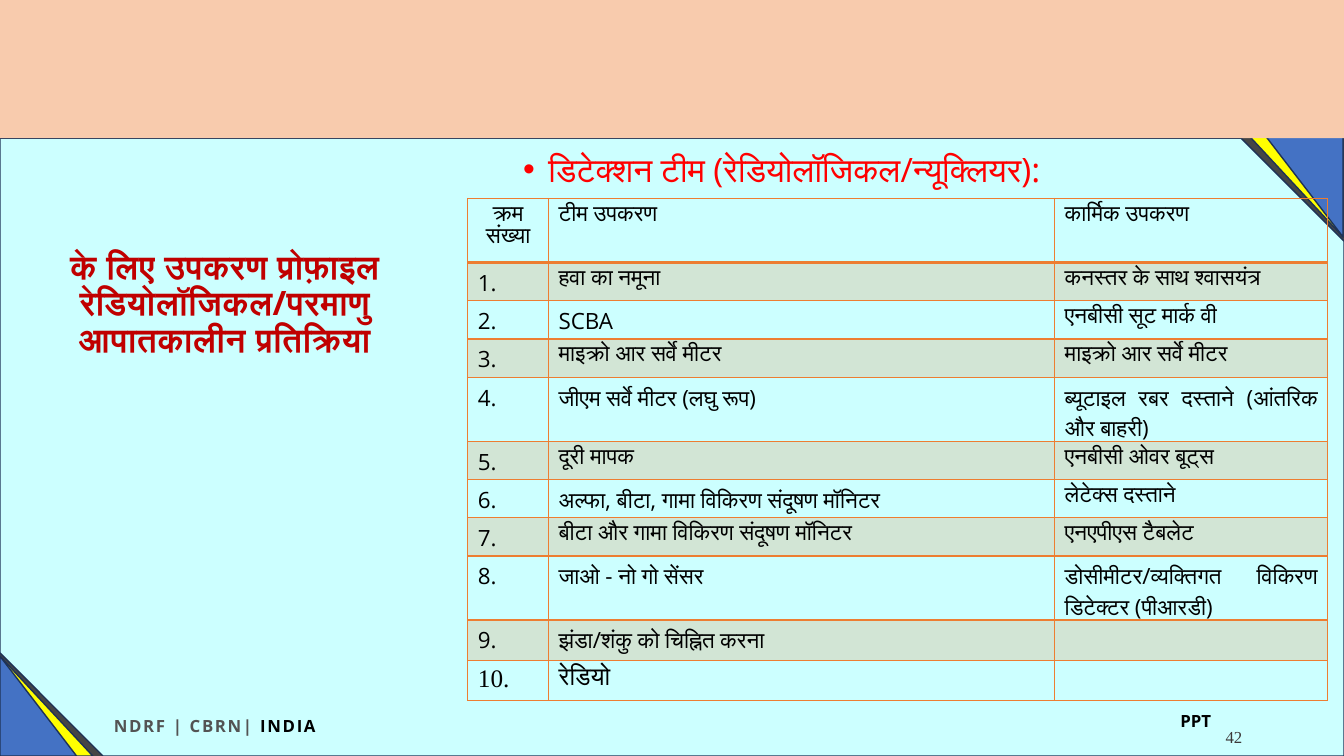
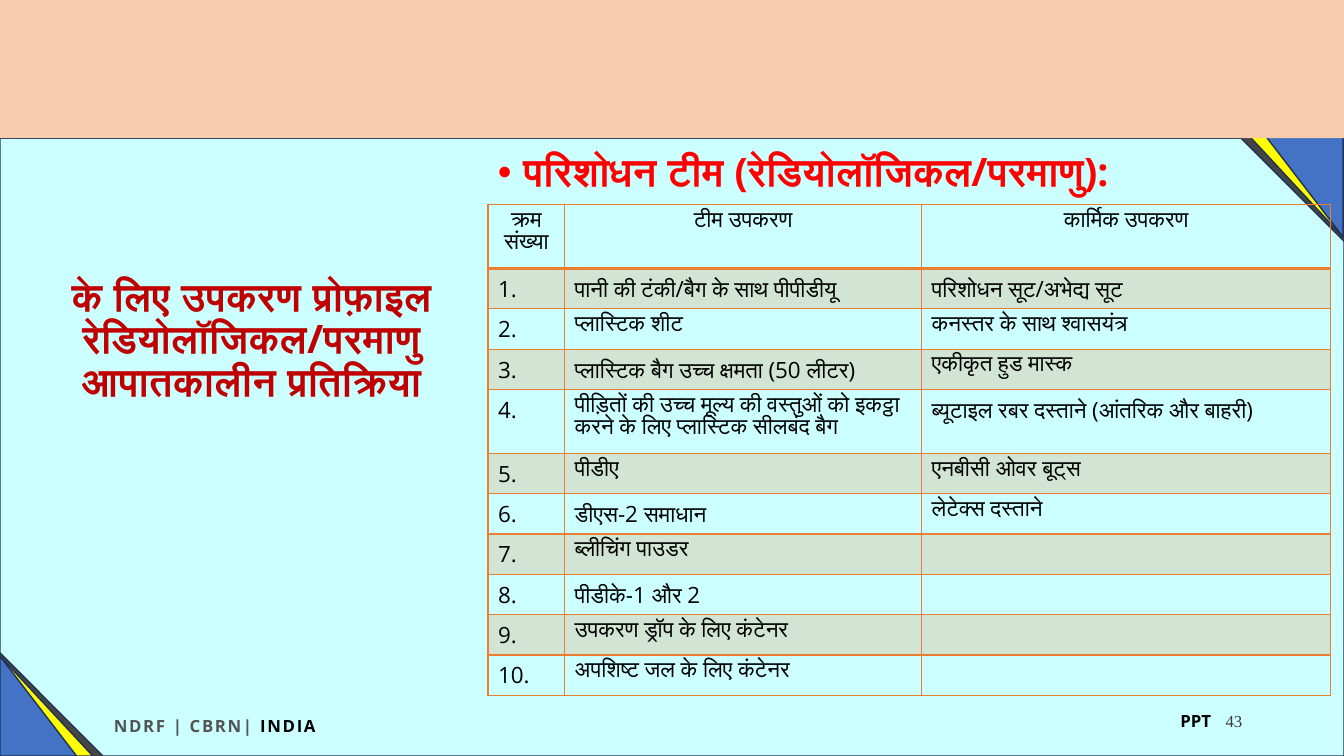
import pptx
import pptx.util
import pptx.dml.color
import pptx.enum.shapes
import pptx.enum.text
import pptx.oxml
import pptx.oxml.ns
from pptx.util import Inches

SHAPE = pptx.enum.shapes.MSO_SHAPE
ALIGN = pptx.enum.text.PP_ALIGN
ANCHOR = pptx.enum.text.MSO_ANCHOR
FIT = pptx.enum.text.MSO_AUTO_SIZE
NS = pptx.oxml.ns.nsdecls("a")
SANS, SERIF = "Open Sans", "Times New Roman"
BLACK, ORANGE, NAVY = "000000", "ED7D31", "1E3256"
HEADS = ["क्रम संख्या", "टीम उपकरण", "कार्मिक उपकरण"]
TITLE = ["के लिए उपकरण प्रोफ़ाइल",
         "रेडियोलॉजिकल/परमाणु आपातकालीन प्रतिक्रिया"]


def color(code):
    return pptx.dml.color.RGBColor.from_string(code)


def node(xml):
    """Parse one drawing element, adding its namespace to the first tag."""
    end = min(i for i in (xml.find("/>"), xml.find(">")) if i > 0)
    return pptx.oxml.parse_xml(f"{xml[:end]} {NS}{xml[end:]}")


class Deck:
    def __init__(self):
        self.prs = pptx.Presentation()
        self.prs.slide_width = Inches(13.33)
        self.prs.slide_height = Inches(7.5)
        self.slide = None

    def start(self, number, top):
        """Add a slide with the shared frame, footer and slide number."""
        self.slide = self.prs.slides.add_slide(self.prs.slide_layouts[5])
        fill = self.slide.background.fill
        fill.solid()
        fill.fore_color.rgb = color("454545")
        for width, code in ((0.92, "FFFF00"), (0.76, "4472C4")):
            self.shape(SHAPE.RIGHT_TRIANGLE, (0, 6.51, width, 0.99), code, NAVY)
            corner = (13.32 - width, 1.36, width, 0.99)
            self.shape(SHAPE.RIGHT_TRIANGLE, corner, code, NAVY).rotation = 180
        self.shape(SHAPE.SNIP_2_DIAG_RECTANGLE, (0, 1.37, 13.33, 6.13),
                   "CCFFFF", NAVY)
        self.shape(SHAPE.RECTANGLE, (0, 0, 13.33, 1.37), "F8CBAD")

        frame, par = self.text((0, 7.01, 4.26, 0.37), ALIGN.CENTER)
        frame.margin_left = frame.margin_right = Inches(0.09)
        frame.margin_top = frame.margin_bottom = Inches(0.09)
        self.run(par, "NDRF | CBRN| ", 12, "535353", bold=True, gap=1.2)
        self.run(par, "INDIA", 12, BLACK, bold=True, gap=1.2)
        par = self.text((11.61, 7, 0.94, 0.3))[1]
        self.run(par, "PPT", 12, BLACK, bold=True)
        frame, par = self.text((9.42, top, 3, 0.4), ALIGN.RIGHT)
        frame.vertical_anchor = ANCHOR.MIDDLE
        self.run(par, str(number), 12, "3B3838", SERIF)

    def shape(self, kind, box, code, edge=None):
        item = self.slide.shapes.add_shape(kind, *map(Inches, box))
        item.shadow.inherit = False
        item.fill.solid()
        item.fill.fore_color.rgb = color(code)
        if edge:
            item.line.color.rgb = color(edge)
            item.line.width = pptx.util.Pt(1)
        else:
            item.line.fill.background()
        return item

    def text(self, box, align=ALIGN.LEFT):
        """Add a text box; return its frame and first paragraph."""
        frame = self.slide.shapes.add_textbox(*map(Inches, box)).text_frame
        frame.word_wrap = True
        par = frame.paragraphs[0]
        par.alignment = align
        return frame, par

    def run(self, par, words, size, code, face=SANS, bold=False, gap=0):
        run = par.add_run()
        run.text = words
        font = run.font
        font.size, font.name, font.bold = pptx.util.Pt(size), face, bold
        font.color.rgb = color(code)
        if gap:
            run._r.get_or_add_rPr().set("spc", str(round(gap * 100)))

    def title(self, box, size):
        item = self.slide.shapes.title
        item.left, item.top, item.width, item.height = map(Inches, box)
        self.slide.shapes.element.append(item.element)  # bring to front
        frame = item.text_frame
        frame.word_wrap = True
        frame.auto_size = FIT.NONE
        frame.vertical_anchor = ANCHOR.MIDDLE
        par = frame.paragraphs[0]
        par.alignment, par.line_spacing = ALIGN.CENTER, 0.9
        for i, line in enumerate(TITLE):
            if i:
                par.add_line_break()
            self.run(par, line, size, "C00000", bold=True, gap=0.1)

    def bullet(self, box, words, size, bold=False):
        par = self.text(box)[1]
        par.line_spacing = 0.9
        props = par._p.get_or_add_pPr()
        props.set("marL", str(Inches(0.25)))
        props.set("indent", str(-Inches(0.25)))
        props.append(node('<a:buFont typeface="Arial"/>'))
        props.append(node('<a:buChar char="•"/>'))
        self.run(par, words, size, "FF0000", bold=bold)

    def cell(self, cell, words, align, size, face, head, band):
        par = cell.text_frame.paragraphs[0]
        par.alignment = align
        if words:
            self.run(par, words, size, BLACK, face)
        if band:
            cell.fill.solid()
            cell.fill.fore_color.rgb = color(ORANGE)
        else:
            cell.fill.background()
        props = cell._tc.get_or_add_tcPr()
        if band:
            tint = props.find(".//" + pptx.oxml.ns.qn("a:srgbClr"))
            tint.append(node('<a:alpha val="20000"/>'))
        for i, side in enumerate("LRTB"):
            width = pptx.util.Pt(2 if head and side == "B" else 1)
            props.insert(i, node(
                f'<a:ln{side} w="{width}"><a:solidFill><a:srgbClr '
                f'val="{ORANGE}"/></a:solidFill></a:ln{side}>'))

    def table(self, left, top, cols, heights, rows, heads, align, last=None):
        """Number the rows; last is the size of a final row set in serif."""
        box = (left, top, sum(cols), sum(heights))
        grid = self.slide.shapes.add_table(
            len(heights), len(cols), *map(Inches, box)).table
        grid.first_row = grid.horz_banding = False
        for col, width in zip(grid.columns, cols):
            col.width = Inches(width)
        for row, height in zip(grid.rows, heights):
            row.height = Inches(height)
        lines = [HEADS] + [(f"{n}.", *row) for n, row in enumerate(rows, 1)]
        for r, line in enumerate(lines):
            final = last and r == len(rows)
            size = last if final else 16
            for c, words in enumerate(line):
                side = align if r else heads if c else ALIGN.CENTER
                face = SERIF if c == 0 and not r or final else SANS
                self.cell(grid.cell(r, c), words, side, size, face,
                          r == 0, r % 2 == 1)


DETECT = [
    ("हवा का नमूना", "कनस्तर के साथ श्वासयंत्र"),
    ("SCBA", "एनबीसी सूट मार्क वी"),
    ("माइक्रो आर सर्वे मीटर", "माइक्रो आर सर्वे मीटर"),
    ("जीएम सर्वे मीटर (लघु रूप)", "ब्यूटाइल रबर दस्ताने (आंतरिक और बाहरी)"),
    ("दूरी मापक", "एनबीसी ओवर बूट्स"),
    ("अल्फा, बीटा, गामा विकिरण संदूषण मॉनिटर", "लेटेक्स दस्ताने"),
    ("बीटा और गामा विकिरण संदूषण मॉनिटर", "एनएपीएस टैबलेट"),
    ("जाओ - नो गो सेंसर", "डोसीमीटर/व्यक्तिगत विकिरण डिटेक्टर (पीआरडी)"),
    ("झंडा/शंकु को चिह्नित करना", ""),
    ("रेडियो", ""),
]
CLEAN = [
    ("पानी की टंकी/बैग के साथ पीपीडीयू", "परिशोधन सूट/अभेद्य सूट"),
    ("प्लास्टिक शीट", "कनस्तर के साथ श्वासयंत्र"),
    ("प्लास्टिक बैग उच्च क्षमता (50 लीटर)", "एकीकृत हुड मास्क"),
    ("पीड़ितों की उच्च मूल्य की वस्तुओं को इकट्ठा करने के लिए "
     "प्लास्टिक सीलबंद बैग", "ब्यूटाइल रबर दस्ताने (आंतरिक और बाहरी)"),
    ("पीडीए", "एनबीसी ओवर बूट्स"),
    ("डीएस-2 समाधान", "लेटेक्स दस्ताने"),
    ("ब्लीचिंग पाउडर", ""),
    ("पीडीके-1 और 2", ""),
    ("उपकरण ड्रॉप के लिए कंटेनर", ""),
    ("अपशिष्ट जल के लिए कंटेनर", ""),
]


def main():
    deck = Deck()
    deck.start(42, 7.11)
    deck.title((0, 2.3, 4.46, 1.45), 24)
    deck.bullet((5.09, 1.47, 7.33, 0.5),
                "डिटेक्शन टीम (रेडियोलॉजिकल/न्यूक्लियर):", 24)
    heights = [0.61 if n in (4, 8) else 0.38 for n in range(11)]
    deck.table(4.64, 1.97, (0.8, 5.02, 2.71), heights, DETECT,
               ALIGN.JUSTIFY, ALIGN.JUSTIFY, last=18)

    deck.start(43, 6.95)
    deck.title((0.14, 2.66, 4.71, 1.45), 28)
    deck.bullet((4.84, 1.47, 7.85, 0.56),
                "परिशोधन टीम (रेडियोलॉजिकल/परमाणु):", 28, bold=True)
    deck.table(4.84, 2.03, (0.76, 3.54, 4.06), [0.4] * 11, CLEAN,
               ALIGN.CENTER, ALIGN.LEFT)
    deck.prs.save("out.pptx")


if __name__ == "__main__":
    main()
